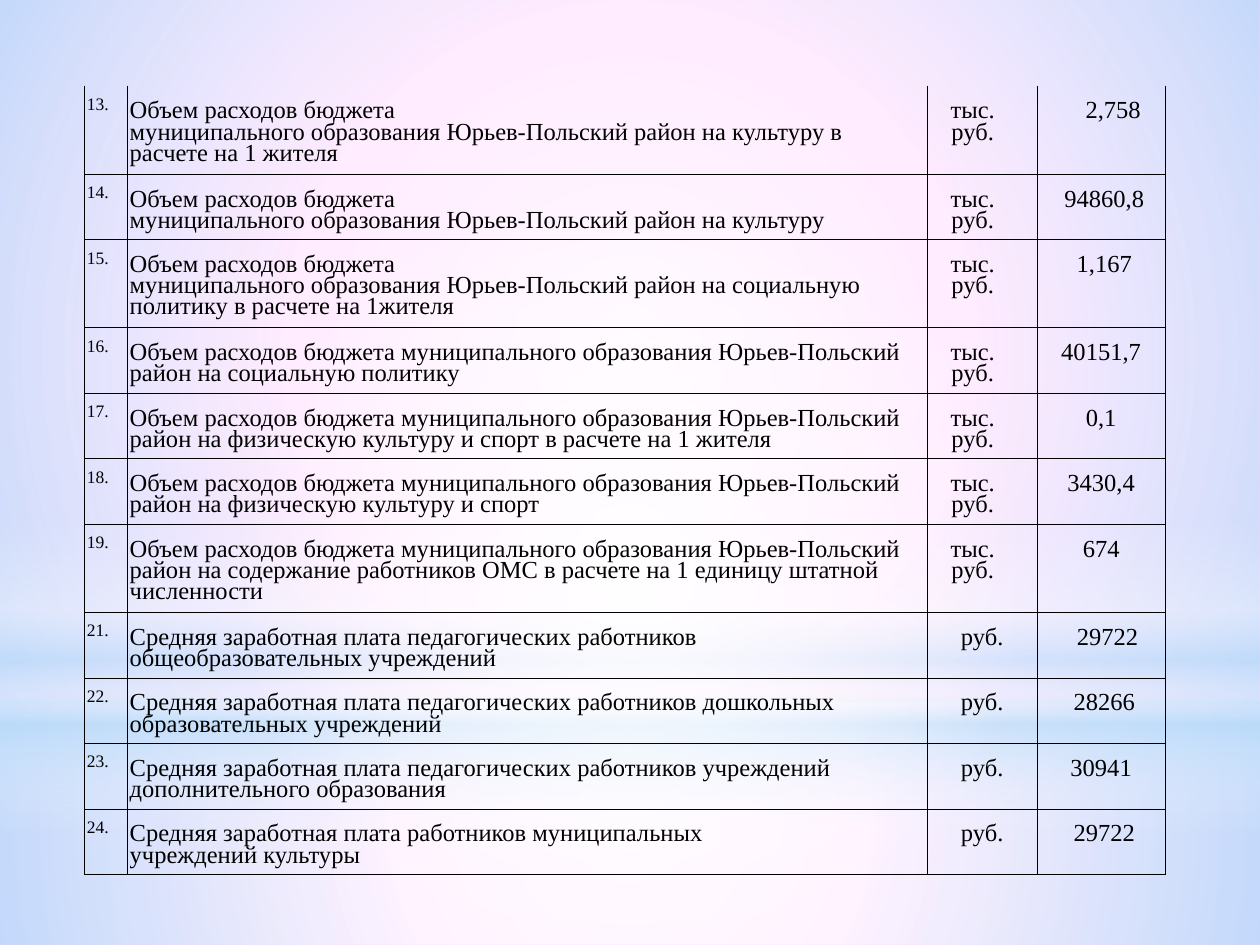
from dataclasses import dataclass

from lxml.etree import SubElement
from pptx import Presentation
from pptx.dml.color import RGBColor
from pptx.enum.shapes import MSO_SHAPE
from pptx.enum.text import PP_ALIGN
from pptx.oxml.ns import qn
from pptx.util import Inches, Pt


@dataclass(frozen=True)
class Theme:
    font: str = "Times New Roman"
    number_size: int = 10
    body_size: int = 14
    line_spacing: float = 0.78
    border_width: float = 0.06
    ink: str = "000000"
    background: str = "FFCCFF"
    white: str = "FFFFFF"
    sky: str = "B4DCFA"


theme = Theme()


def set_gradient(shape, stops, radial):
    """Fill with (position, colour, opacity) stops, all in percent."""
    shape.fill.background()
    properties = shape.fill._xPr
    no_fill = properties.find(qn("a:noFill"))
    gradient = SubElement(properties, qn("a:gradFill"), rotWithShape="1")
    properties.replace(no_fill, gradient)
    stop_list = SubElement(gradient, qn("a:gsLst"))
    for position, colour, opacity in stops:
        stop = SubElement(stop_list, qn("a:gs"), pos=str(position * 1000))
        color = SubElement(stop, qn("a:srgbClr"), val=colour)
        SubElement(color, qn("a:alpha"), val=str(opacity * 1000))
    if radial:
        path = SubElement(gradient, qn("a:path"), path="circle")
        SubElement(path, qn("a:fillToRect"), l="50000", t="50000", r="50000", b="50000")
    else:
        SubElement(gradient, qn("a:lin"), ang="5400000", scaled="0")


def set_borders(cell, has_top):
    properties = cell._tc.get_or_add_tcPr()
    for side in "LRTB":
        line = SubElement(properties, qn(f"a:ln{side}"), w=str(Pt(theme.border_width)))
        if side == "T" and not has_top:
            SubElement(line, qn("a:noFill"))
        else:
            fill = SubElement(line, qn("a:solidFill"))
            SubElement(fill, qn("a:srgbClr"), val=theme.ink)


presentation = Presentation()
presentation.slide_width = Inches(10)
presentation.slide_height = Inches(7.5)
slide = presentation.slides.add_slide(presentation.slide_layouts[6])
slide.background.fill.solid()
slide.background.fill.fore_color.rgb = RGBColor.from_string(theme.background)

# Background glow: preset, top, height, gradient stops, radial
white, sky = theme.white, theme.sky
glows = [
    (MSO_SHAPE.RECTANGLE, 5.58, 1.92, [(0, white, 91), (37, white, 76), (100, sky, 79)], True),
    (MSO_SHAPE.RECTANGLE, 0, 5.58, [(0, white, 89), (48, white, 62), (100, sky, 79)], True),
    (MSO_SHAPE.RECTANGLE, 4.12, 2.5, [(0, white, 0), (29, white, 30), (45, sky, 40),
                                      (55, white, 26), (65, sky, 60), (100, white, 0)], False),
    (MSO_SHAPE.OVAL, 1.75, 5.58, [(0, white, 100), (56, white, 0)], True),
]
for preset, top, height, stops, radial in glows:
    shape = slide.shapes.add_shape(preset, 0, Inches(top), presentation.slide_width, Inches(height))
    shape.shadow.inherit = False
    shape.line.fill.background()
    set_gradient(shape, stops, radial)

# Number, indicator, unit, value, left shift of the value, lines of text
budget = "Объем расходов бюджета"
district = "муниципального образования Юрьев-Польский район на"
salary = "Средняя заработная плата"
thousands, roubles = "тыс.\nруб.", "руб."
indicators = [
    ("13.", f"{budget}\n{district} культуру в\nрасчете на 1 жителя", thousands, "2,758", 0.19, 3),
    ("14.", f"{budget}\n{district} культуру", thousands, "94860,8", 0.05, 2),
    ("15.", f"{budget}\n{district} социальную политику в расчете на 1жителя",
     thousands, "1,167", 0.05, 3),
    ("16.", f"{budget} {district} социальную политику", thousands, "40151,7", 0, 2),
    ("17.", f"{budget} {district} физическую культуру и спорт в расчете на 1 жителя",
     thousands, "0,1", 0, 2),
    ("18.", f"{budget} {district} физическую культуру и спорт", thousands, "3430,4", 0, 2),
    ("19.", f"{budget} {district} содержание работников ОМС в расчете на 1 единицу "
            "штатной численности", thousands, "674", 0, 3),
    ("21.", f"{salary} педагогических работников общеобразовательных учреждений",
     roubles, "29722", 0.1, 2),
    ("22.", f"{salary} педагогических работников дошкольных образовательных учреждений",
     roubles, "28266", 0.05, 2),
    ("23.", f"{salary} педагогических работников учреждений дополнительного образования",
     roubles, "30941", 0, 2),
    ("24.", f"{salary} работников муниципальных\nучреждений культуры",
     roubles, "29722", 0.05, 2),
]
column_widths = [0.34, 6.35, 0.87, 1.02]
row_heights = {2: 0.52, 3: 0.7}

table = slide.shapes.add_table(
    len(indicators), len(column_widths), Inches(0.67), Inches(0.68), Inches(sum(column_widths)),
    Inches(sum(row_heights[indicator[-1]] for indicator in indicators))).table
table.first_row = False
table.horz_banding = False
for column, width in zip(table.columns, column_widths):
    column.width = Inches(width)

for row_index, (*texts, value_shift, line_count) in enumerate(indicators):
    table.rows[row_index].height = Inches(row_heights[line_count])
    unit_shift = 0.15 if texts[2] == thousands else 0
    for column_index, text in enumerate(texts):
        cell = table.cell(row_index, column_index)
        is_number = column_index == 0
        cell.margin_left = Inches(0.02 + (value_shift if column_index == 3 else 0))
        cell.margin_right = Inches(0.02 + (unit_shift if column_index == 2 else 0))
        cell.margin_top = Inches(0.1 if is_number else 0.13)
        cell.margin_bottom = 0
        set_borders(cell, has_top=row_index > 0)
        cell.fill.background()
        cell.text_frame.text = text
        for paragraph in cell.text_frame.paragraphs:
            paragraph.line_spacing = theme.line_spacing
            paragraph.alignment = PP_ALIGN.CENTER if column_index > 1 else PP_ALIGN.LEFT
            for run in paragraph.runs:
                run.font.name = theme.font
                run.font.size = Pt(theme.number_size if is_number else theme.body_size)
                run.font.color.rgb = RGBColor.from_string(theme.ink)

presentation.save("out.pptx")
